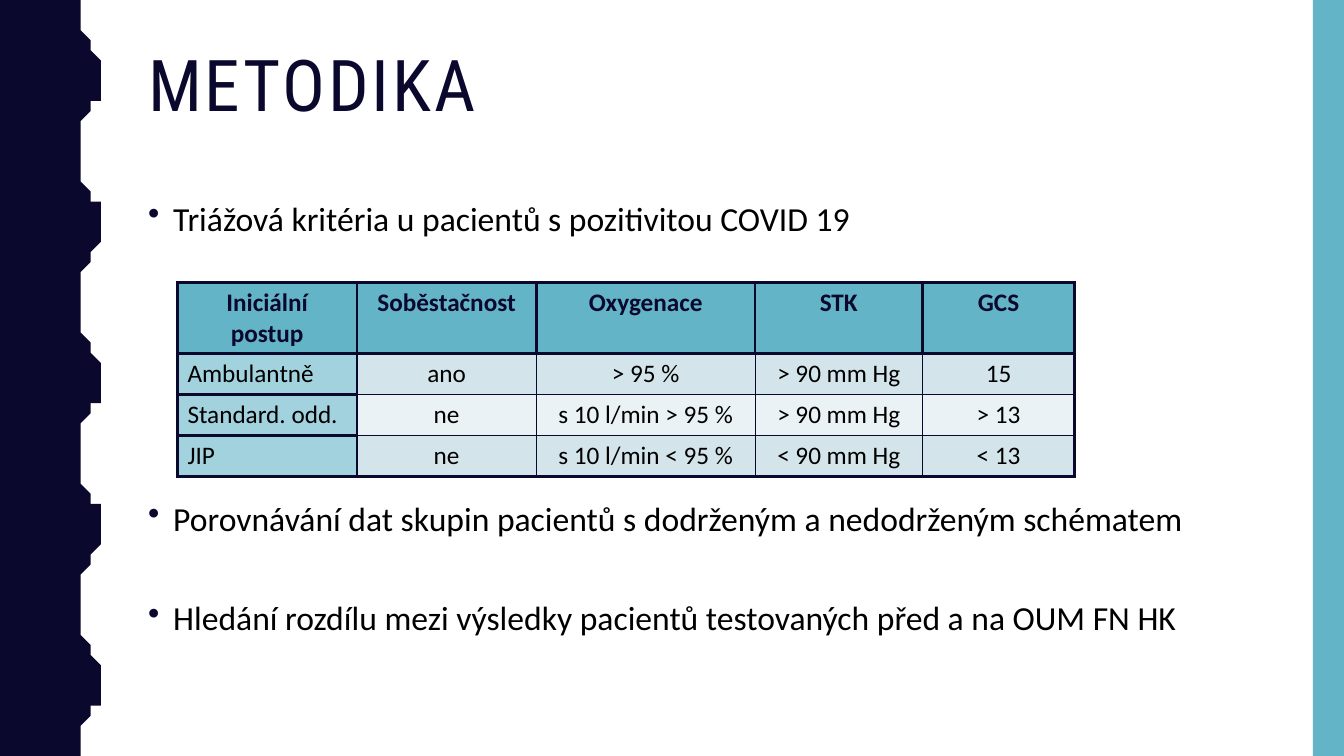
from lxml.etree import SubElement
from pptx import Presentation
from pptx.dml.color import RGBColor
from pptx.enum.shapes import MSO_SHAPE as Preset
from pptx.enum.text import PP_ALIGN as Align
from pptx.oxml import parse_xml
from pptx.oxml.ns import nsdecls, qn
from pptx.util import Inches, Pt

# The grid has ten columns and ten rows to the inch.
COLUMNS, ROWS = 133.3, 75

# One bulge of the wavy edge, from trough to crest: (column, row)
RISE = [(7.8, 0), (7.8, 0.7), (7.9, 1.4), (8, 2), (8.1, 2.5), (8.3, 2.9),
        (8.5, 3.3), (8.7, 3.8), (8.9, 4.2), (9.1, 4.6), (9.3, 5),
        (9.5, 5.5), (9.6, 6.1), (9.7, 6.8), (9.7, 7.5)]
WAVE_ROWS, WAVE_COUNT = 15, 5

GOALS = [  # wording, points of space before
    ("Triážová kritéria u pacientů s pozitivitou COVID 19", 0),
    ("Porovnávání dat skupin pacientů s dodrženým a nedodrženým schématem", 185.7),
    ("Hledání rozdílu mezi výsledky pacientů testovaných před a na OUM FN HK", 42.1),
]
CRITERIA = [
    ["Iniciální postup", "Soběstačnost", "Oxygenace", "STK", "GCS"],
    ["Ambulantně", "ano", "> 95 %", "> 90 mm Hg", "15"],
    ["Standard. odd.", "ne", "s 10 l/min > 95 %", "> 90 mm Hg", "> 13"],
    ["JIP", "ne", "s 10 l/min < 95 %", "< 90 mm Hg", "< 13"],
]


def rgb(code):
    return RGBColor.from_string(code)


def grid(cells):
    return Inches(cells / 10)


class TriageSlide:
    NAVY, TEAL, BLACK = "0B082E", "62B4C6", "000000"
    SIDE, BANDS = "A1D2DD", ("EAF2F5", "D3E5EA")
    HEADING, BODY = "Roboto Condensed", "Calibri"
    THICK, THIN = 2.25, 1

    def __init__(self):
        self.deck = Presentation()
        self.deck.slide_width, self.deck.slide_height = grid(COLUMNS), grid(ROWS)
        self.slide = self.deck.slides.add_slide(self.deck.slide_layouts[6])

    def paint(self, shape, color):
        shape.shadow.inherit = False
        shape.fill.solid()
        shape.fill.fore_color.rgb = rgb(color)
        shape.line.fill.background()

    def wavy_edge(self):
        fall = [(col, WAVE_ROWS - row) for col, row in reversed(RISE)]
        edge = [(col, row + wave * WAVE_ROWS)
                for wave in range(WAVE_COUNT) for col, row in RISE + fall[1:]]
        outline = self.slide.shapes.build_freeform(0, 0, scale=grid(1))
        outline.add_line_segments(edge + [(0, ROWS)], close=True)
        self.paint(outline.convert_to_shape(), self.NAVY)

    def side_bar(self, left, width):
        bar = self.slide.shapes.add_shape(
            Preset.RECTANGLE, grid(left), 0, grid(width), grid(ROWS))
        self.paint(bar, self.TEAL)

    def text_frame(self, left, top, width, height, inset):
        box = self.slide.shapes.add_textbox(*map(grid, (left, top, width, height)))
        box.text_frame.word_wrap = True
        box.text_frame.margin_top = grid(inset)
        return box.text_frame

    def add_run(self, paragraph, wording, size, color, font=BODY, bold=False):
        run = paragraph.add_run()
        run.text = wording
        run.font.name, run.font.size, run.font.bold = font, Pt(size), bold
        run.font.color.rgb = rgb(color)
        return run

    def title(self, wording, *place):
        heading = self.text_frame(*place, inset=0.7).paragraphs[0]
        heading.line_spacing = 0.9
        run = self.add_run(heading, wording, 51, self.NAVY, self.HEADING)
        run.font._element.set("spc", "200")

    def bullets(self, items, *place):
        frame = self.text_frame(*place, inset=5.5)
        for index, (wording, space) in enumerate(items):
            item = frame.add_paragraph() if index else frame.paragraphs[0]
            item.space_before = Pt(space)
            layout = item._p.get_or_add_pPr()
            layout.set("marL", str(grid(2.5)))
            layout.set("indent", str(-grid(2.5)))
            bullet_color = SubElement(layout, qn("a:buClr"))
            SubElement(bullet_color, qn("a:srgbClr"), val=self.NAVY)
            SubElement(layout, qn("a:buChar"), char="•")
            self.add_run(item, wording, 24, self.BLACK)

    def borders(self, cell, widths):
        """Draw the edges; widths are in points: left, right, top, bottom."""
        properties = cell._tc.get_or_add_tcPr()
        for position, (side, width) in enumerate(zip("LRTB", widths)):
            properties.insert(position, parse_xml(
                f'<a:ln{side} {nsdecls("a")} w="{Pt(width)}"><a:solidFill>'
                f'<a:srgbClr val="{self.NAVY}"/></a:solidFill></a:ln{side}>'))

    def table(self, rows, left, top, col_widths, row_heights):
        table = self.slide.shapes.add_table(
            len(rows), len(col_widths), grid(left), grid(top),
            grid(sum(col_widths)), grid(sum(row_heights))).table
        table.first_row = table.horz_banding = False
        for column, width in zip(table.columns, col_widths):
            column.width = grid(width)
        for row, height in zip(table.rows, row_heights):
            row.height = grid(height)
        last_row, last_col = len(rows) - 1, len(col_widths) - 1
        for r, row in enumerate(rows):
            for c, wording in enumerate(row):
                header, side = r == 0, c == 0
                cell = table.cell(r, c)
                cell.fill.solid()
                cell.fill.fore_color.rgb = rgb(
                    self.TEAL if header else self.SIDE if side else self.BANDS[r % 2])
                outer = (c <= 1, c == last_col, r <= 1, r == last_row)
                self.borders(cell, [self.THICK if header or side or edge else self.THIN
                                    for edge in outer])
                paragraph = cell.text_frame.paragraphs[0]
                paragraph.alignment = Align.LEFT if side and not header else Align.CENTER
                self.add_run(paragraph, wording, 18,
                             self.NAVY if header else self.BLACK, bold=header)


def main():
    slide = TriageSlide()
    slide.wavy_edge()
    slide.side_bar(130.2, 3.1)
    slide.bullets(GOALS, 13.7, 14.1, 111.3, 53.3)
    slide.title("METODIKA", 13.7, 4.2, 111.3, 16.3)
    slide.table(CRITERIA, 17.6, 28, [17.8, 17.8, 21.7, 16.6, 15.1], [7.1] + [4.05] * 3)
    slide.deck.save("out.pptx")


if __name__ == "__main__":
    main()
